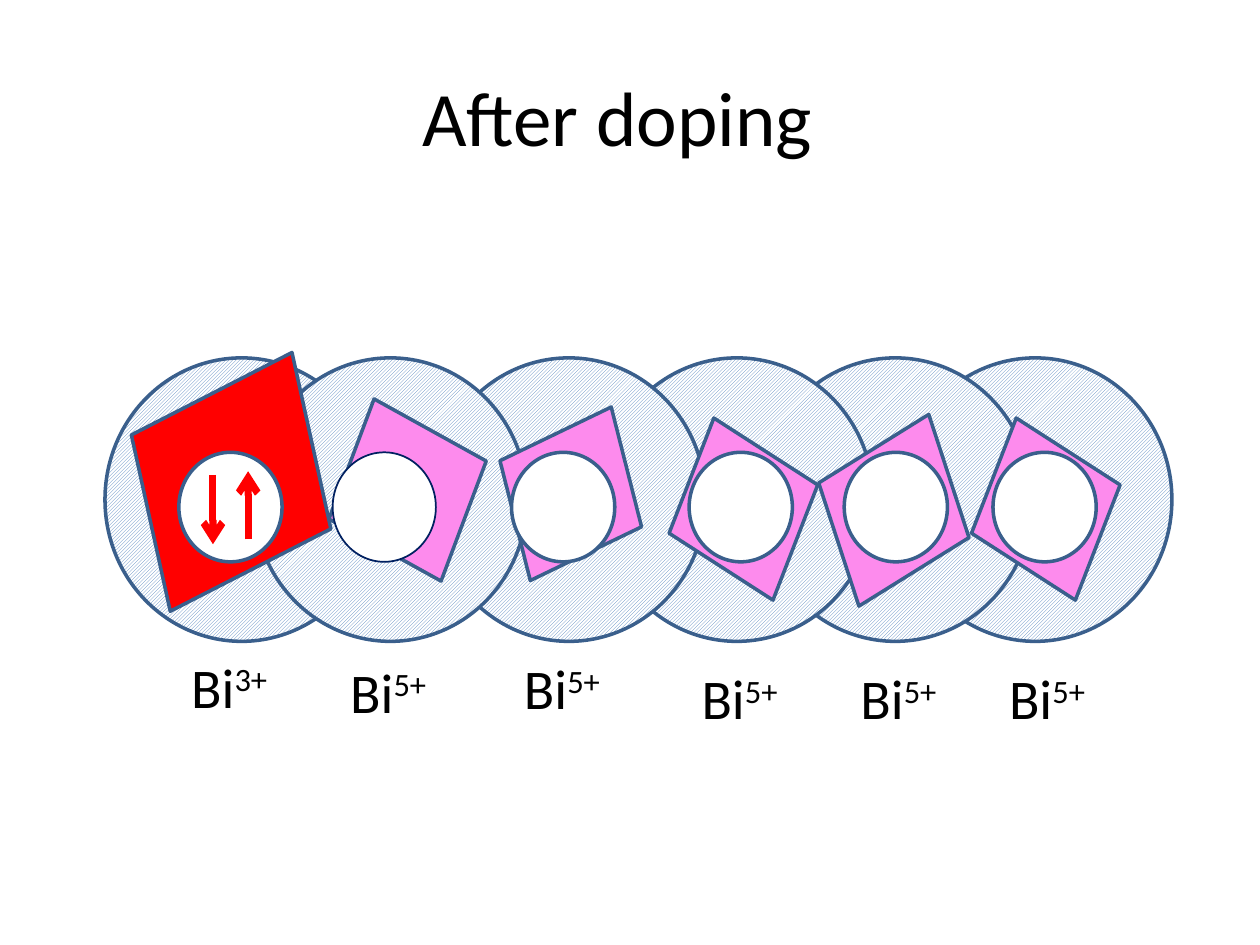
from collections import namedtuple

from lxml.etree import SubElement
from pptx import Presentation
from pptx.dml.color import RGBColor
from pptx.enum.dml import MSO_PATTERN
from pptx.enum.shapes import MSO_CONNECTOR, MSO_SHAPE
from pptx.enum.text import MSO_ANCHOR, MSO_AUTO_SIZE, PP_ALIGN
from pptx.oxml.ns import qn
from pptx.util import Pt

HEX = {
    "edge": "3A5F8C", "navy": "002060", "hatch": "4F81BD",
    "white": "FFFFFF", "black": "000000", "red": "FF0000", "pink": "FD8BED",
}
Box = namedtuple("Box", "x y w h")
Gem = namedtuple("Gem", "x y w h turn")
Site = namedtuple("Site", "ring gem disc label charge")

TITLE = Box(28.8, 20.9, 648, 90)
CHAIN = Box(60, 204.5, 610, 213)
RING = (156.2, 162)
DISC = (59, 62.6)
DISC_Y = 54
LABEL = (68.4, 46)

# All places are measured from the corner of the chain.
SITES = [
    Site(0, Gem(9.1, -10.8, 126, 163.4, 25.2), 42.2, (42.2, 164.9), "3+"),
    Site(85, Gem(125, 20.1, 95.8, 110.9, -20.2), 130.1, (133, 167.7), "5+"),
    Site(187, Gem(221.5, 23, 89.3, 109.4, 25), 232.3, (232.3, 165.6), "5+"),
    Site(283, Gem(320.2, 31.7, 89.3, 109.4, -18), 333.8, (333.8, 171.3), "5+"),
    Site(373.5, Gem(405.1, 28.8, 91.4, 116.6, 20), 422.4, (424.6, 171.3), "5+"),
    Site(453.5, Gem(493, 31.7, 89.3, 109.4, -18), 507.4, (509.5, 171.3), "5+"),
]


def rgb(name):
    return RGBColor.from_string(HEX[name])


def style(item, **values):
    for name, value in values.items():
        setattr(item, name, value)


def write(para, text, size):
    run = para.add_run()
    run.text = text
    style(run.font, name="Calibri", size=Pt(size))
    run.font.color.rgb = rgb("black")
    return run


def add_form(slide, kind, box, fill, edge="edge", width=2):
    form = slide.shapes.add_shape(kind, *map(Pt, box))
    form.shadow.inherit = False
    if fill == "hatch":
        form.fill.patterned()
        form.fill.pattern = MSO_PATTERN.LIGHT_UPWARD_DIAGONAL
        form.fill.fore_color.rgb = rgb("hatch")
        form.fill.back_color.rgb = rgb("white")
    else:
        form.fill.solid()
        form.fill.fore_color.rgb = rgb(fill)
    form.line.color.rgb = rgb(edge)
    form.line.width = Pt(width)
    return form


def add_label(slide, box, charge):
    label = slide.shapes.add_textbox(*map(Pt, box))
    style(label.text_frame, word_wrap=False,
          auto_size=MSO_AUTO_SIZE.SHAPE_TO_FIT_TEXT)
    para = label.text_frame.paragraphs[0]
    write(para, "Bi", 32)
    power = write(para, charge, 32)
    power.font._element.set("baseline", "30000")


def add_spins(slide, box):
    """Draw the down and up arrows inside a disc."""
    for x, start, end in ((39.6, 49.7, 10.8), (19.5, 12.9, 52.5)):
        spin = slide.shapes.add_connector(
            MSO_CONNECTOR.STRAIGHT, Pt(box.x + x), Pt(box.y + start),
            Pt(box.x + x), Pt(box.y + end))
        spin.line.color.rgb = rgb("red")
        spin.line.width = Pt(4)
        SubElement(spin.line._get_or_add_ln(), qn("a:tailEnd"), type="arrow")
        SubElement(spin._element.spPr, qn("a:effectLst"))


def add_title(slide, box):
    title = slide.shapes.title
    places = zip(("left", "top", "width", "height"), map(Pt, box))
    style(title, **dict(places))
    title.text_frame.vertical_anchor = MSO_ANCHOR.MIDDLE
    para = title.text_frame.paragraphs[0]
    para.alignment = PP_ALIGN.CENTER
    write(para, "After doping", 44)


def add_chain(slide, box):
    """Draw the sites in layers: rings, diamonds, discs, spins, labels."""
    first, second, third, *rest = SITES
    for site in [first, *reversed(SITES[1:])]:
        add_form(slide, MSO_SHAPE.OVAL, (box.x + site.ring, box.y, *RING), "hatch")

    for site in [second, third, first, *rest]:
        gem = site.gem
        place = (box.x + gem.x, box.y + gem.y, gem.w, gem.h)
        fill = "red" if site is first else "pink"
        add_form(slide, MSO_SHAPE.DIAMOND, place, fill).rotation = gem.turn

    for site in SITES:
        place = Box(box.x + site.disc, box.y + DISC_Y, *DISC)
        edge = ("navy", 1) if site is second else ("edge", 2)
        add_form(slide, MSO_SHAPE.OVAL, place, "white", *edge)
        if site is first:
            add_spins(slide, place)

    for site in SITES:
        x, y = site.label
        add_label(slide, (box.x + x, box.y + y, *LABEL), site.charge)


def main():
    deck = Presentation()
    style(deck, slide_width=Pt(720), slide_height=Pt(540))
    slide = deck.slides.add_slide(deck.slide_layouts[5])
    add_title(slide, TITLE)
    add_chain(slide, CHAIN)
    deck.save("out.pptx")


if __name__ == "__main__":
    main()
